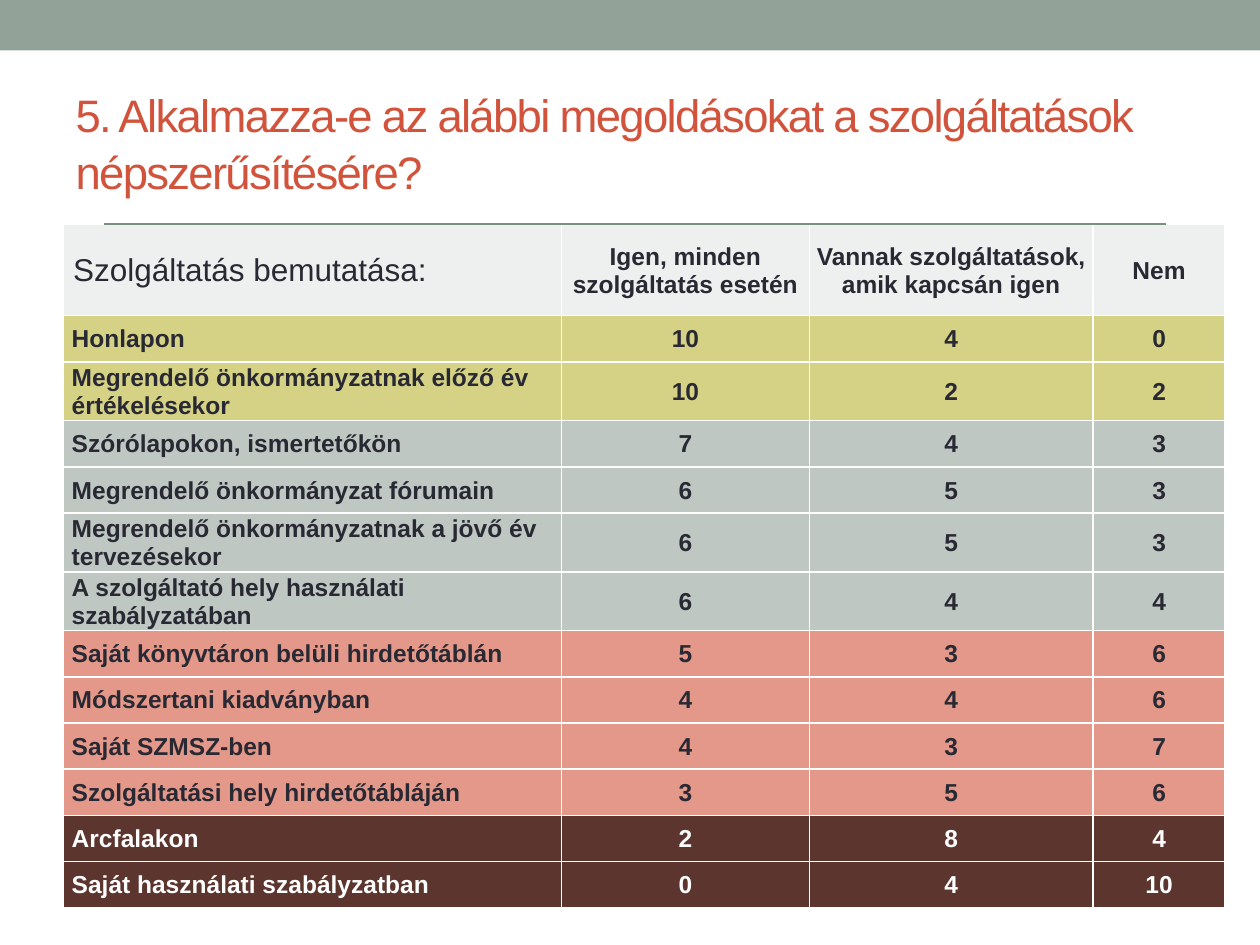
from lxml import etree
from pptx import Presentation
from pptx.dml.color import RGBColor
from pptx.enum.shapes import MSO_CONNECTOR, MSO_SHAPE
from pptx.enum.text import MSO_ANCHOR as ANCHOR, PP_ALIGN as ALIGN
from pptx.oxml.ns import qn
from pptx.util import Pt


def rgb(code):
    return RGBColor.from_string(code)


def add_border(tcPr, side):
    ln = etree.SubElement(tcPr, qn(f"a:{side}"), w=str(Pt(1)))
    fill = etree.SubElement(ln, qn("a:solidFill"))
    etree.SubElement(fill, qn("a:srgbClr"), val="FFFFFF")


DARK, WHITE = "292934", "FFFFFF"
HEADER, GREEN, GREY, RED, BROWN = "EEF0EF", "D5D286", "BEC7C2", "E4988A", "5B352E"
TALL, LOW = 33.6, 26.4
COL_WIDTHS = [284.4, 141.8, 162, 75.6]

rows = [
    (HEADER, "Szolgáltatás bemutatása:", "Igen, minden szolgáltatás esetén",
     "Vannak szolgáltatások, amik kapcsán igen", "Nem"),
    (GREEN, "Honlapon", 10, 4, 0),
    (GREEN, "Megrendelő önkormányzatnak előző év\nértékelésekor", 10, 2, 2),
    (GREY, "Szórólapokon, ismertetőkön", 7, 4, 3),
    (GREY, "Megrendelő önkormányzat fórumain", 6, 5, 3),
    (GREY, "Megrendelő önkormányzatnak a jövő év\ntervezésekor", 6, 5, 3),
    (GREY, "A szolgáltató hely használati\nszabályzatában", 6, 4, 4),
    (RED, "Saját könyvtáron belüli hirdetőtáblán", 5, 3, 6),
    (RED, "Módszertani kiadványban", 4, 4, 6),
    (RED, "Saját SZMSZ-ben", 4, 3, 7),
    (RED, "Szolgáltatási hely hirdetőtábláján", 3, 5, 6),
    (BROWN, "Arcfalakon", 2, 8, 4),
    (BROWN, "Saját használati szabályzatban", 0, 4, 10),
]

prs = Presentation()
prs.slide_width, prs.slide_height = Pt(720), Pt(540)
s = prs.slides.add_slide(prs.slide_layouts[5])

banner = s.shapes.add_shape(MSO_SHAPE.RECTANGLE, 0, 0, Pt(720), Pt(28.8))
banner.shadow.inherit = False
banner.fill.solid()
banner.fill.fore_color.rgb = rgb("93A299")
banner.line.fill.background()

title = s.shapes.title
title.left, title.top, title.width, title.height = Pt(36), Pt(41.8), Pt(648), Pt(78)
tf = title.text_frame
tf.text = "5. Alkalmazza-e az alábbi megoldásokat a szolgáltatások népszerűsítésére?"
tf.word_wrap = True
tf.vertical_anchor = ANCHOR.MIDDLE
p = tf.paragraphs[0]
p.alignment = ALIGN.LEFT
p.line_spacing = 1.05
r = p.runs[0]
r.font.name, r.font.size = "Arial", Pt(26)
r.font.color.rgb = rgb("D2533C")
r.font._element.set("spc", "-100")

heights = [52] + [TALL if "\n" in row[1] else LOW for row in rows[1:]]
table = s.shapes.add_table(len(rows), len(COL_WIDTHS), Pt(36.4), Pt(128.4),
                           Pt(sum(COL_WIDTHS)), Pt(sum(heights))).table
for col, width in zip(table.columns, COL_WIDTHS):
    col.width = Pt(width)

for i, (fill, *values) in enumerate(rows):
    table.rows[i].height = Pt(heights[i])
    for j, value in enumerate(values):
        corner = i == 0 and j == 0
        cell = table.cell(i, j)
        cell.text = str(value)
        cell.vertical_anchor = ANCHOR.MIDDLE
        cell.margin_left = Pt(0.7 if j else 5.4 if corner else 4.6)
        cell.margin_right = cell.margin_top = Pt(0.7)
        cell.margin_bottom = 0
        for side in ("lnL", "lnR", "lnT", "lnB"):
            add_border(cell._tc.get_or_add_tcPr(), side)
        cell.fill.solid()
        cell.fill.fore_color.rgb = rgb(fill)
        for p in cell.text_frame.paragraphs:
            p.alignment = ALIGN.CENTER if j else ALIGN.LEFT
            font = p.runs[0].font
            font.name, font.size = "Arial", Pt(18 if corner else 14)
            font.bold = not corner
            font.color.rgb = rgb(WHITE if fill == BROWN else DARK)

rule = s.shapes.add_connector(MSO_CONNECTOR.STRAIGHT, Pt(59.6), Pt(128.2), Pt(666), Pt(128.2))
rule.line.color.rgb = rgb("7B8E82")
rule.line.width = Pt(1)
etree.SubElement(rule._element.spPr, qn("a:effectLst"))

prs.save("out.pptx")
